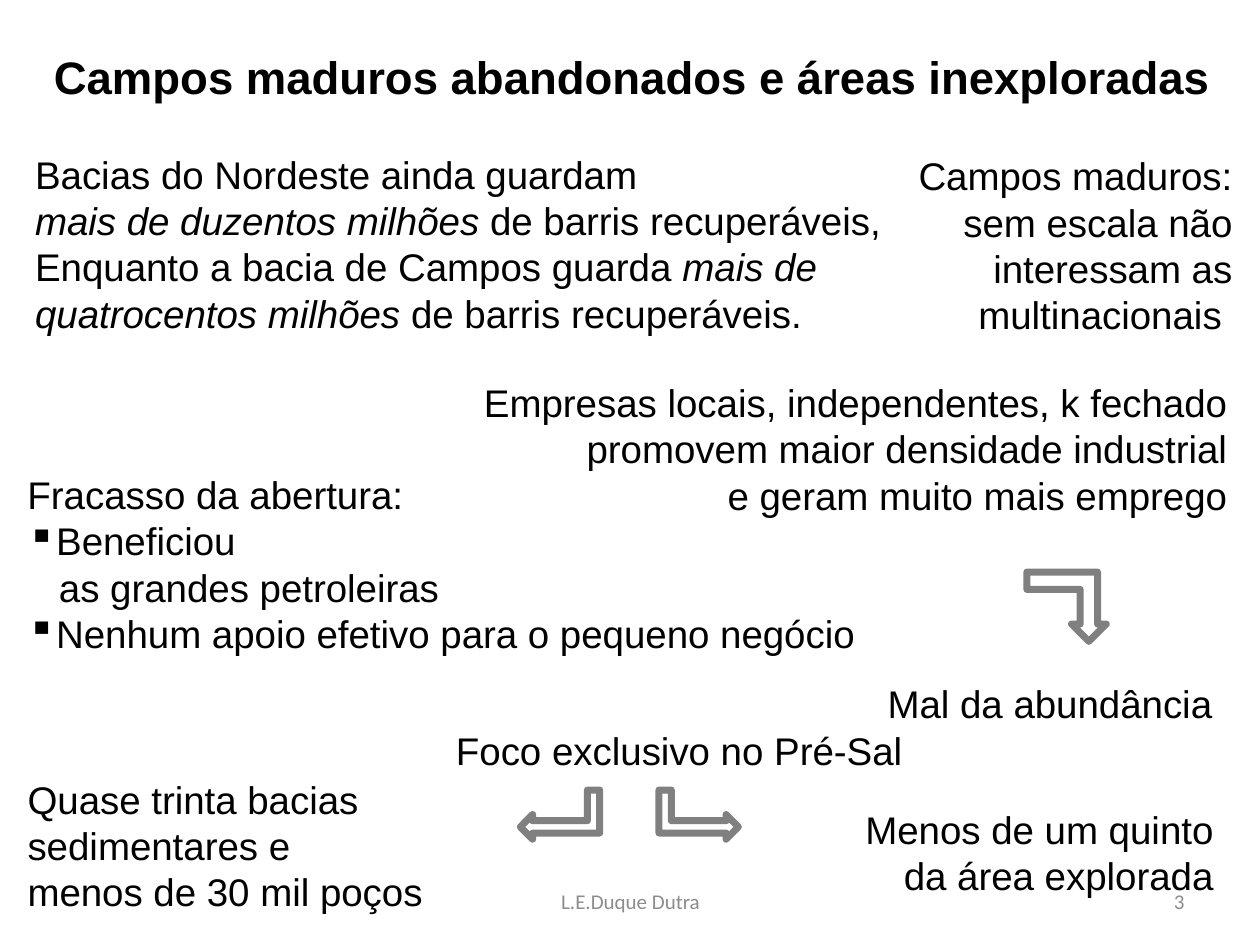
from dataclasses import dataclass

import pptx
import pptx.dml.color
import pptx.enum.shapes
import pptx.enum.text
import pptx.oxml
import pptx.oxml.ns
import pptx.util
from pptx.util import Inches

BLACK = pptx.dml.color.RGBColor(0x00, 0x00, 0x00)
FOOTER_GRAY = pptx.dml.color.RGBColor(0x8C, 0x8C, 0x8C)
ARROW_GRAY = pptx.dml.color.RGBColor(0x80, 0x80, 0x80)

ALIGN = pptx.enum.text.PP_ALIGN
ANCHOR = pptx.enum.text.MSO_ANCHOR
AUTO_SIZE = pptx.enum.text.MSO_AUTO_SIZE


@dataclass
class Run:
    text: str
    italic: bool = False


@dataclass
class Line:
    """A paragraph; its text starts at margin, after an optional bullet."""
    runs: list[Run]
    margin: float = 0
    bullet: str = ""


@dataclass
class Arrow:
    left: float
    top: float
    width: float
    height: float
    rotation: int
    flip: str = ""


def plain(*texts: str) -> list[Line]:
    return [Line([Run(t)]) for t in texts]


def set_indent(p, line: Line) -> None:
    pPr = p._p.get_or_add_pPr()
    margin = Inches(line.margin)
    pPr.set("marL", str(margin))
    pPr.set("indent", str(-margin if line.bullet else 0))
    if line.bullet:
        bullet = pptx.oxml.parse_xml(
            f'<a:buChar {pptx.oxml.ns.nsdecls("a")} char="{line.bullet}"/>')
        pPr.append(bullet)


def add_text(s, lines: list[Line], left: float, top: float, width: float, height: float, *,
             size: int = 22, font: str = "Arial", color=BLACK, bold: bool = False,
             align=ALIGN.LEFT, anchor=ANCHOR.TOP, wrap: bool = True, grow: bool = True) -> None:
    sp = s.shapes.add_textbox(Inches(left), Inches(top), Inches(width), Inches(height))
    tf = sp.text_frame
    tf.word_wrap = wrap
    tf.auto_size = AUTO_SIZE.SHAPE_TO_FIT_TEXT if grow else AUTO_SIZE.NONE
    tf.vertical_anchor = anchor
    for i, line in enumerate(lines):
        p = tf.add_paragraph() if i else tf.paragraphs[0]
        p.alignment = align
        if line.margin:
            set_indent(p, line)
        for run in line.runs:
            r = p.add_run()
            r.text = run.text
            r.font.size = pptx.util.Pt(size)
            r.font.name = font
            r.font.color.rgb = color
            r.font.bold = bold
            r.font.italic = run.italic


def add_arrow(s, arrow: Arrow) -> None:
    sp = s.shapes.add_shape(pptx.enum.shapes.MSO_SHAPE.BENT_UP_ARROW,
                            Inches(arrow.left), Inches(arrow.top),
                            Inches(arrow.width), Inches(arrow.height))
    sp.shadow.inherit = False
    sp.fill.background()
    sp.line.color.rgb = ARROW_GRAY
    sp.line.width = pptx.util.Pt(4)
    sp.rotation = arrow.rotation
    if arrow.flip:
        sp._element.spPr.xfrm.set(arrow.flip, "1")


BASINS = [
    Line([Run("Bacias do Nordeste ainda guardam")]),
    Line([Run("mais de duzentos milhões", True), Run(" de barris recuperáveis,")]),
    Line([Run("Enquanto a bacia de Campos guarda "), Run("mais de", True)]),
    Line([Run("quatrocentos milhões", True), Run(" de barris recuperáveis.")]),
]
FAILURE = [
    Line([Run("Fracasso da abertura:")]),
    Line([Run("Beneficiou")], 0.2, "▪"),
    Line([Run("as grandes petroleiras")], 0.25),
    Line([Run("Nenhum apoio efetivo para o pequeno negócio")], 0.2, "▪"),
]
ARROWS = [
    Arrow(8.15, 4.54, 0.63, 0.55, 180, "flipH"),
    Arrow(5.35, 6.15, 0.39, 0.63, 90),
    Arrow(4.25, 6.15, 0.39, 0.63, 90, "flipV"),
]


def main() -> None:
    prs = pptx.Presentation()
    prs.slide_width, prs.slide_height = Inches(10), Inches(7.5)
    s = prs.slides.add_slide(prs.slide_layouts[6])

    footer = dict(size=12, font="Calibri", color=FOOTER_GRAY, anchor=ANCHOR.MIDDLE, grow=False)
    add_text(s, plain("3"), 7.17, 6.95, 2.33, 0.4, align=ALIGN.RIGHT, **footer)
    add_text(s, plain("L.E.Duque Dutra"), 3.42, 6.95, 3.17, 0.4, align=ALIGN.CENTER, **footer)

    add_text(s, plain("Campos maduros abandonados e áreas inexploradas"),
             0, 0.34, 10.04, 0.54, size=26, bold=True, align=ALIGN.CENTER)
    add_text(s, BASINS, 0.18, 1.15, 7.09, 1.58, wrap=False)
    add_text(s, plain("Mal da abundância"), 2.32, 5.35, 7.4, 0.47, align=ALIGN.RIGHT)
    add_text(s, plain("Foco exclusivo no Pré-Sal"), 2.32, 5.72, 4.94, 0.47, align=ALIGN.RIGHT)
    add_text(s, plain("Campos maduros:", "sem escala não interessam as multinacionais "),
             6.65, 1.16, 3.23, 1.58, align=ALIGN.RIGHT)
    add_text(s, plain("Empresas locais, independentes, k fechado",
                      "promovem maior densidade industrial",
                      "e geram muito mais emprego"),
             3.66, 2.96, 6.18, 1.21, align=ALIGN.RIGHT, wrap=False)
    add_text(s, FAILURE, 0.12, 3.69, 6.93, 1.58)
    add_text(s, plain("Quase trinta bacias", "sedimentares e", "menos de 30 mil poços"),
             0.12, 6.11, 3.55, 1.21, wrap=False)
    add_text(s, plain("Menos de um quinto", "da área explorada"),
             6.64, 6.35, 3.09, 0.84, align=ALIGN.RIGHT, wrap=False)

    for arrow in ARROWS:
        add_arrow(s, arrow)
    prs.save("out.pptx")


if __name__ == "__main__":
    main()
